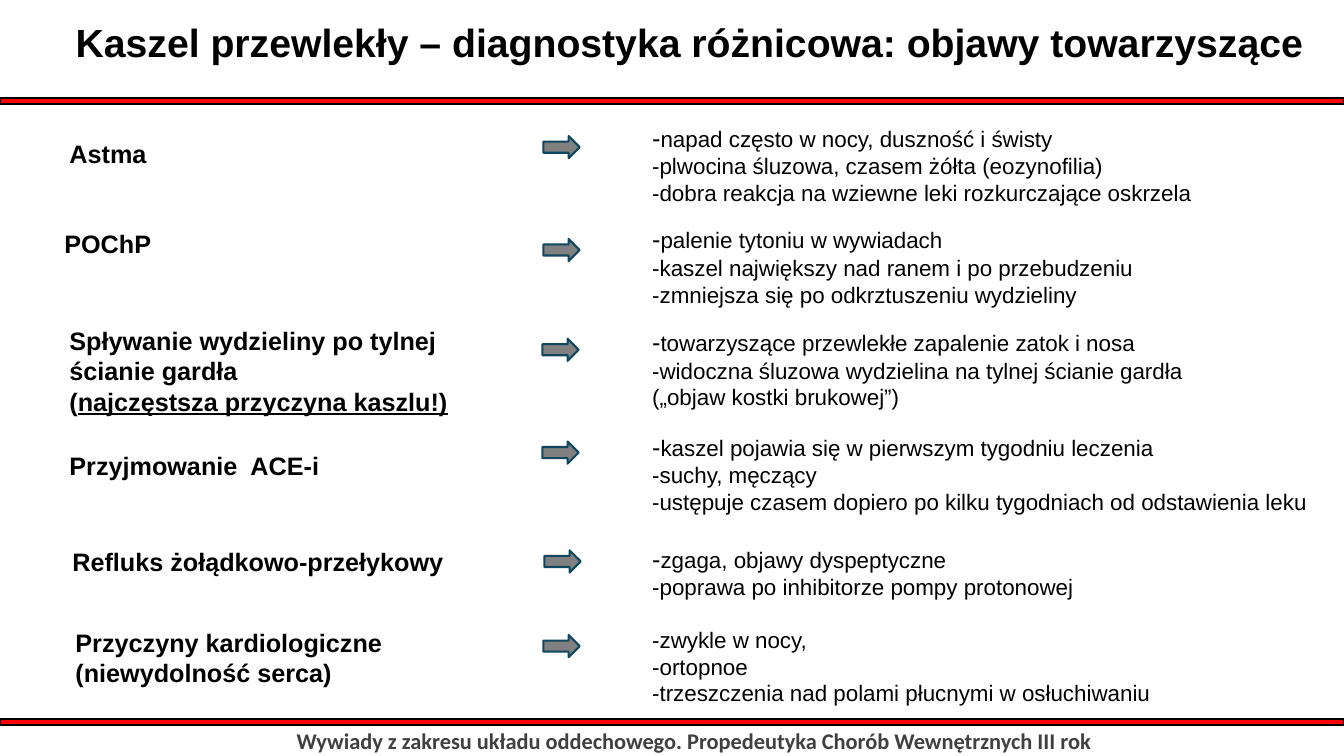
from pptx import Presentation
from pptx.dml.color import RGBColor
from pptx.enum.shapes import MSO_SHAPE
from pptx.enum.text import MSO_ANCHOR, PP_ALIGN
from pptx.util import Inches, Pt

RECT, ARROW = MSO_SHAPE.RECTANGLE, MSO_SHAPE.RIGHT_ARROW
TOP, LEFT, CENTER = MSO_ANCHOR.TOP, PP_ALIGN.LEFT, PP_ALIGN.CENTER

BLACK = RGBColor(0x00, 0x00, 0x00)
RED = RGBColor(0xFF, 0x00, 0x00)
GRAY = RGBColor(0x80, 0x80, 0x80)
DARK = RGBColor(0x40, 0x40, 0x40)
TEAL = RGBColor(0x10, 0x47, 0x60)

TITLE = "Kaszel przewlekły – diagnostyka różnicowa: objawy towarzyszące"
FOOTER = "Wywiady z zakresu układu oddechowego. Propedeutyka Chorób Wewnętrznych III rok"

BASE = {"name": "Arial", "size": Pt(16), "bold": False}
HEAD = {**BASE, "size": Pt(28), "bold": True}
CAUSE = {**BASE, "size": Pt(18), "bold": True}
UNDER = {**CAUSE, "underline": True}
DASH = {**BASE, "size": Pt(18)}
FOOT = {"name": "Calibri", "size": Pt(16), "bold": True}

# Each row: cause and its box, arrow corner, symptoms and their box (top, width, height)
ROWS = [
    (["Astma"], (0.59, 1.32, 3.88, 0.4), (5.39, 1.35),
     ["-napad często w nocy, duszność i świsty",
      "-plwocina śluzowa, czasem żółta (eozynofilia)",
      "-dobra reakcja na wziewne leki rozkurczające oskrzela"],
     (1.16, 5.63, 0.94)),
    (["POChP"], (0.54, 2.22, 3.6, 0.4), (5.39, 2.37),
     ["-palenie tytoniu w wywiadach",
      "-kaszel największy nad ranem i po przebudzeniu",
      "-zmniejsza się po odkrztuszeniu wydzieliny"],
     (2.17, 6.25, 0.94)),
    (["Spływanie wydzieliny po tylnej ścianie gardła",
      "(najczęstsza przyczyna kaszlu!)"], (0.59, 3.18, 4.38, 1.01), (5.38, 3.36),
     ["-towarzyszące przewlekłe zapalenie zatok i nosa",
      "-widoczna śluzowa wydzielina na tylnej ścianie gardła („objaw kostki brukowej”)"],
     (3.19, 6.11, 0.94)),
    (["Przyjmowanie  ACE-i"], (0.59, 4.42, 3.65, 0.4), (5.38, 4.38),
     ["-kaszel pojawia się w pierwszym tygodniu leczenia",
      "-suchy, męczący",
      "-ustępuje czasem dopiero po kilku tygodniach od odstawienia leku"],
     (4.23, 6.9, 0.94)),
    (["Refluks żołądkowo-przełykowy"], (0.62, 5.37, 4.33, 0.4), (5.4, 5.46),
     ["-zgaga, objawy dyspeptyczne",
      "-poprawa po inhibitorze pompy protonowej"],
     (5.34, 5.88, 0.67)),
    (["Przyczyny kardiologiczne (niewydolność serca)"],
     (0.65, 6.17, 3.38, 0.71), (5.39, 6.3),
     ["-zwykle w nocy,",
      "-ortopnoe",
      "-trzeszczenia nad polami płucnymi w osłuchiwaniu"],
     (6.16, 6.35, 0.91)),
]
SYMPTOM_X = 6.37
ARROW_SIZE = (0.36, 0.22)
BAR_TOPS = (0.97, 7.13)

prs = Presentation()
prs.slide_width, prs.slide_height = Inches(13.33), Inches(7.5)
slide = prs.slides.add_slide(prs.slide_layouts[5])


def add_block(kind, box, fill, edge):
    block = slide.shapes.add_shape(kind, *map(Inches, box))
    block.shadow.inherit = False
    block.fill.solid()
    block.fill.fore_color.rgb = fill
    block.line.color.rgb = edge
    block.line.width = Pt(1.5)


def write(frame, paras, align=LEFT, color=BLACK):
    """Fill a text frame; each paragraph is a list of (text, format) runs."""
    frame.word_wrap = True
    frame.vertical_anchor = TOP
    for i, runs in enumerate(paras):
        para = frame.add_paragraph() if i else frame.paragraphs[0]
        para.alignment = align
        for text, style in runs:
            run = para.add_run()
            run.text = text
            run.font.color.rgb = color
            for key, value in style.items():
                setattr(run.font, key, value)


def add_text(box, paras, **look):
    write(slide.shapes.add_textbox(*map(Inches, box)).text_frame, paras, **look)


def cause_runs(line):
    if line.startswith("("):
        return [("(", CAUSE), (line[1:], UNDER)]
    return [(line, CAUSE)]


def symptom_paras(lines, large):
    """Split off the first dash when it is set larger than the text."""
    paras = [[(line, BASE)] for line in lines]
    if large:
        paras[0] = [("-", DASH), (lines[0][1:], BASE)]
    return paras


title = slide.shapes.title
title.left, title.top, title.width, title.height = map(Inches, (0.65, 0.13, 12.68, 0.57))
write(title.text_frame, [[(TITLE, HEAD)]])

for top in BAR_TOPS:
    add_block(RECT, (0, top, 13.33, 0.06), RED, BLACK)
add_text((2.47, 7.16, 8.83, 0.37), [[(FOOTER, FOOT)]], align=CENTER, color=DARK)

for row in ROWS:
    cause, cause_box, corner, symptoms, symptom_box = row
    add_text(cause_box, [cause_runs(line) for line in cause])
    add_text((SYMPTOM_X, *symptom_box), symptom_paras(symptoms, row is not ROWS[-1]))
    add_block(ARROW, corner + ARROW_SIZE, GRAY, TEAL)

prs.save("out.pptx")
